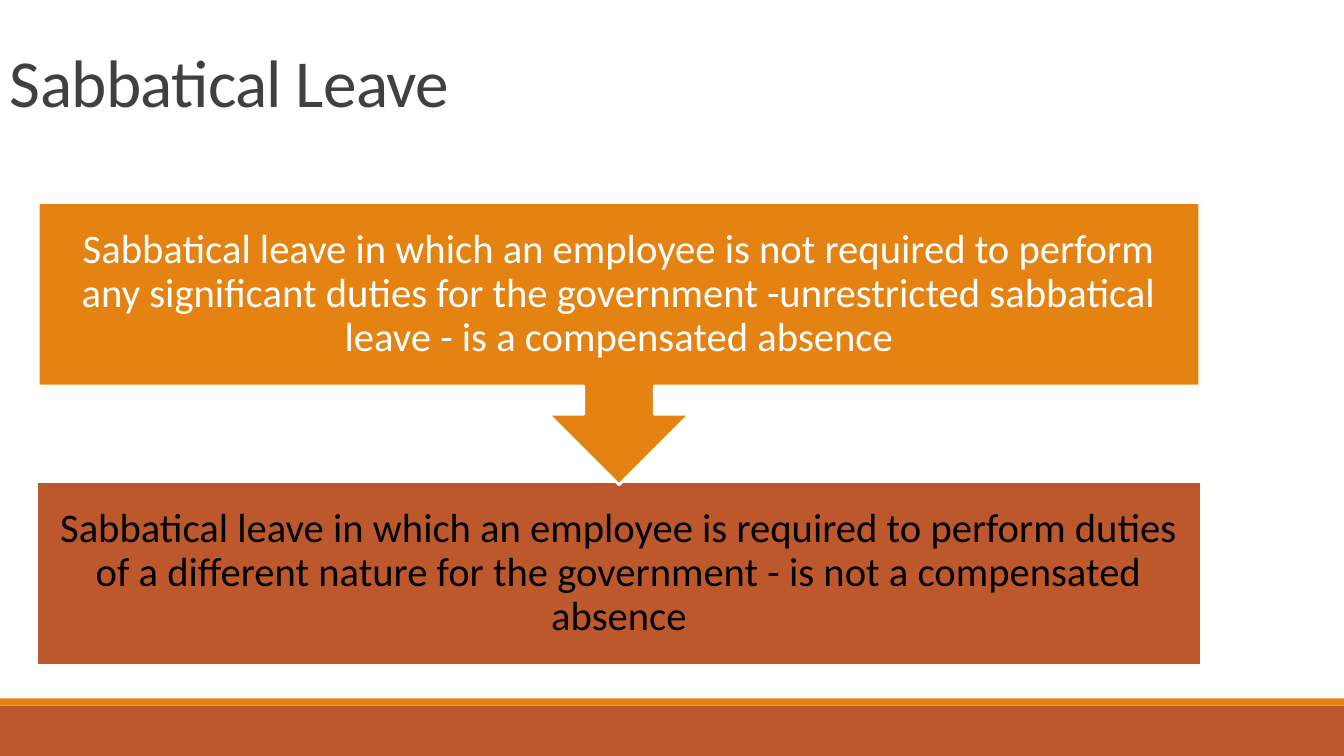
from pptx import Presentation
from pptx.dml.color import RGBColor
from pptx.enum.shapes import MSO_SHAPE
from pptx.enum.text import MSO_ANCHOR, PP_ALIGN
from pptx.util import Inches, Pt

ORANGE = RGBColor(0xE4, 0x83, 0x12)
RUST = RGBColor(0xBD, 0x58, 0x2C)
GRAY = RGBColor(0x40, 0x40, 0x40)
BLACK = RGBColor(0, 0, 0)
WHITE = RGBColor(0xFF, 0xFF, 0xFF)

WIDTH, HEIGHT = 13.33, 7.5
TITLE = "Sabbatical Leave"
FOOTER_BARS = [(7, 0.5, RUST), (6.93, 0.07, ORANGE)]
STEPS = [
    ("Sabbatical leave in which an employee is required to perform duties of a "
     "different nature for the government - is not a compensated absence",
     MSO_SHAPE.RECTANGLE, (0.36, 4.78, 11.56, 1.82), RUST, BLACK),
    ("Sabbatical leave in which an employee is not required to perform any "
     "significant duties for the government -unrestricted sabbatical leave - "
     "is a compensated absence",
     MSO_SHAPE.DOWN_ARROW_CALLOUT, (0.38, 2.01, 11.52, 2.8), ORANGE, WHITE),
]


def add_block(slide, kind, box, fill):
    s = slide.shapes.add_shape(kind, *map(Inches, box))
    s.shadow.inherit = False
    s.fill.solid()
    s.fill.fore_color.rgb = fill
    s.line.fill.background()
    return s


def write_text(s, text, size, color, align, spacing, inset=None):
    tf = s.text_frame
    frame = {"word_wrap": True, "vertical_anchor": MSO_ANCHOR.MIDDLE}
    if inset is not None:
        for side in ("left", "top", "right", "bottom"):
            frame[f"margin_{side}"] = Inches(inset)
    for name, value in frame.items():
        setattr(tf, name, value)
    p = tf.paragraphs[0]
    p.alignment, p.line_spacing = align, spacing
    r = p.add_run()
    r.text = text
    for name, value in {"name": "Calibri", "size": Pt(size)}.items():
        setattr(r.font, name, value)
    r.font.color.rgb = color
    return r


def main():
    prs = Presentation()
    prs.slide_width, prs.slide_height = Inches(WIDTH), Inches(HEIGHT)
    slide = prs.slides.add_slide(prs.slide_layouts[6])

    for top, height, fill in FOOTER_BARS:
        add_block(slide, MSO_SHAPE.RECTANGLE, (0, top, WIDTH, height), fill)

    title = slide.shapes.add_textbox(0, 0, Inches(12.29), Inches(1.72))
    r = write_text(title, TITLE, 48, GRAY, PP_ALIGN.LEFT, 0.85)
    r.font._element.set("spc", "-50")

    for text, kind, box, fill, color in STEPS:
        s = add_block(slide, kind, box, fill)
        s.line.color.rgb = WHITE
        s.line.width = Pt(2)
        write_text(s, text, 29, color, PP_ALIGN.CENTER, 0.9, 0.23)

    prs.save("out.pptx")


if __name__ == "__main__":
    main()
